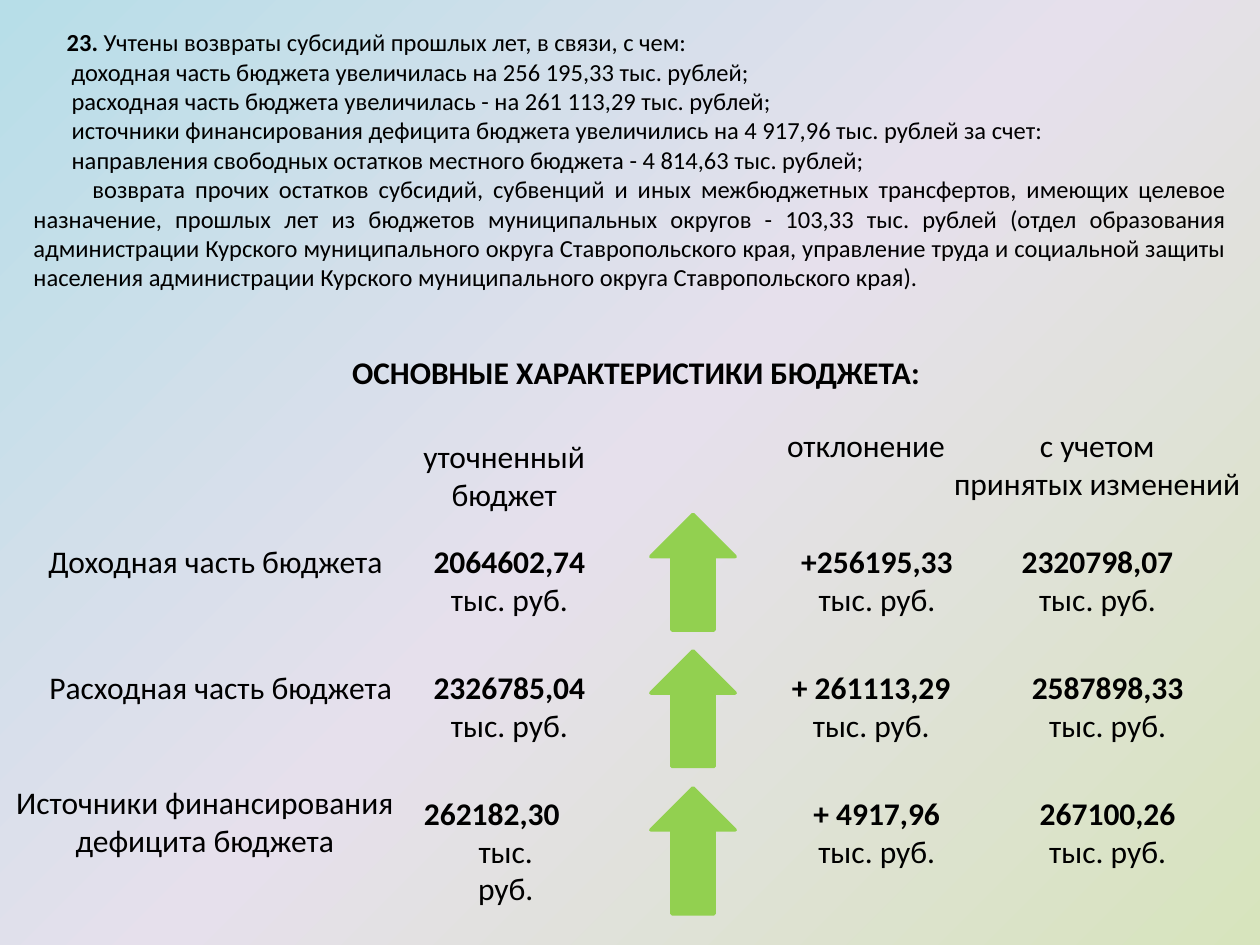
from pptx import Presentation
from pptx import util as u
from pptx.dml.color import RGBColor
from pptx.enum import shapes, text
from pptx.oxml import parse_xml
from pptx.oxml.ns import nsdecls, qn

UNIT = "тыс. руб."
ROW_TOP, ROW_STEP = 10.8, 2.54

INTRO = [  # first-line indent in cm, text
    (0.77, "доходная часть бюджета увеличилась на 256 195,33 тыс. рублей;"),
    (0.77, "расходная часть бюджета увеличилась - на 261 113,29 тыс. рублей;"),
    (0.77, "источники финансирования дефицита бюджета увеличились "
           "на 4 917,96 тыс. рублей за счет:"),
    (0.77, "направления свободных остатков местного бюджета - 4 814,63 тыс. рублей;"),
    (1.19, "возврата прочих остатков субсидий, субвенций и иных межбюджетных "
           "трансфертов, имеющих целевое назначение, прошлых лет из бюджетов "
           "муниципальных округов - 103,33 тыс. рублей (отдел образования "
           "администрации Курского муниципального округа Ставропольского края, "
           "управление труда и социальной защиты населения администрации "
           "Курского муниципального округа Ставропольского края)."),
]

HEADINGS = [  # left, top, width, lines
    (7.2, 8.68, 5.93, ["уточненный", "бюджет"]),
    (15.45, 8.46, 4.02, ["отклонение"]),
    (18.84, 8.46, 6.56, ["с учетом", "принятых изменений"]),
]

LABELS = [  # left, top, width, text
    (0.64, 10.8, 7.41, "Доходная часть бюджета"),
    (0.64, 13.34, 7.62, "Расходная часть бюджета"),
    (0, 15.66, 8.26, "Источники финансирования дефицита бюджета"),
]

AMOUNTS = [  # for each row: left, width, amount
    [(8.26, 4.02, "2064602,74"), (15.88, 3.6, "+256195,33"), (19.69, 4.87, "2320798,07")],
    [(8.26, 4.02, "2326785,04"), (15.45, 4.23, "+ 261113,29"), (20.32, 4.02, "2587898,33")],
    [(8.26, 4.02, "262182,30"), (15.45, 4.45, "+ 4917,96"), (20.32, 4.02, "267100,26")],
]

ARROWS = [(10.37, 2.33), (13.12, 2.33), (15.88, 2.54)]  # top, height


def color(value):
    return RGBColor.from_string(value)


def apply(target, values):
    for name, value in values.items():
        setattr(target, name, value)


class BudgetSlide:
    font = {"name": "Calibri", "size": u.Pt(18), "bold": False}
    ink = "000000"
    green = "92D050"

    def __init__(self, deck):
        self.page = deck.slides.add_slide(deck.slide_layouts[1])

    def background(self, stops):
        """Radial gradient that spreads from the bottom right corner."""
        marks = "".join(
            f'<a:gs pos="{place * 1000}"><a:srgbClr val="{value}"/></a:gs>'
            for place, value in stops)
        self.page.element.cSld.insert(0, parse_xml(
            f'<p:bg {nsdecls("p", "a")}><p:bgPr><a:gradFill rotWithShape="1">'
            f'<a:gsLst>{marks}</a:gsLst><a:path path="circle">'
            '<a:fillToRect l="100000" t="100000"/></a:path></a:gradFill>'
            '<a:effectLst/></p:bgPr></p:bg>'))

    def place(self, box, left, top, width, height, wrap=True):
        apply(box, {"left": u.Cm(left), "top": u.Cm(top),
                    "width": u.Cm(width), "height": u.Cm(height)})
        apply(box.text_frame, {"word_wrap": wrap,
                               "auto_size": text.MSO_AUTO_SIZE.SHAPE_TO_FIT_TEXT,
                               "vertical_anchor": text.MSO_ANCHOR.TOP})

    def add_span(self, para, content, align=text.PP_ALIGN.CENTER, **changes):
        para.alignment = align
        span = para.add_run()
        span.text = content
        apply(span.font, {**self.font, **changes})
        span.font.color.rgb = color(self.ink)

    def indent(self, para, **lengths):
        for name, value in lengths.items():
            para._p.get_or_add_pPr().set(name, str(u.Cm(value)))

    def title(self, content):
        box = self.page.shapes.title
        self.place(box, 6.78, 6.99, 12.09, 1.02, wrap=False)
        self.add_span(box.text_frame.paragraphs[0], content, bold=True)

    def intro(self, number, opening, items):
        box = self.page.placeholders[1]
        self.place(box, 0.42, 0.42, 24.56, 6.25)
        style = {"align": text.PP_ALIGN.JUSTIFY, "size": u.Pt(14)}
        para = box.text_frame.paragraphs[0]
        self.add_span(para, number + " ", bold=True, **style)
        self.add_span(para, opening, **style)
        for _, content in items:
            self.add_span(box.text_frame.add_paragraph(), content, **style)
        indents = [0.67] + [first for first, _ in items]
        for para, first in zip(box.text_frame.paragraphs, indents):
            para.space_before = u.Pt(0)
            self.indent(para, marL=0, indent=first)
            para._p.pPr.append(para._p.pPr.makeelement(qn("a:buNone"), {}))

    def label(self, left, top, width, lines, height=1.8, bold_first=False):
        box = self.page.shapes.add_textbox(0, 0, 0, 0)
        self.place(box, left, top, width, height)
        frame = box.text_frame
        for index, line in enumerate(lines):
            para = frame.add_paragraph() if index else frame.paragraphs[0]
            self.add_span(para, line, bold=bold_first and index == 0)
        return frame.paragraphs

    def up_arrow(self, top, height):
        arrow = self.page.shapes.add_shape(
            shapes.MSO_SHAPE.DOWN_ARROW,
            u.Cm(13.12), u.Cm(top), u.Cm(1.7), u.Cm(height))
        arrow.rotation = 180
        arrow.shadow.inherit = False
        for fill in (arrow.fill, arrow.line.fill):
            fill.solid()
            fill.fore_color.rgb = color(self.green)
        arrow.line.width = u.Pt(2)


def main():
    deck = Presentation()
    apply(deck, {"slide_width": u.Cm(25.4), "slide_height": u.Cm(19.05)})
    slide = BudgetSlide(deck)
    slide.background([(0, "D7E4BD"), (50, "E6E0EC"), (100, "B7DEE8")])
    slide.intro("23.", "Учтены возвраты субсидий прошлых лет, в связи, с чем:", INTRO)
    slide.title("ОСНОВНЫЕ ХАРАКТЕРИСТИКИ БЮДЖЕТА:")

    for left, top, width, lines in HEADINGS:
        slide.label(left, top, width, lines, height=0.9 * len(lines))
    for left, top, width, content in LABELS:
        slide.label(left, top, width, [content], height=1.02)
    cells = []
    for row, amounts in enumerate(AMOUNTS):
        for left, width, amount in amounts:
            cells.append(slide.label(left, ROW_TOP + row * ROW_STEP, width,
                                     [amount, UNIT], bold_first=True))
    # The first amount of the last row stands left of its unit
    amount, unit = cells[6]
    slide.indent(amount, marR=0.71)
    slide.indent(unit, marL=0.56)
    for top, height in ARROWS:
        slide.up_arrow(top, height)
    deck.save("out.pptx")


if __name__ == "__main__":
    main()
